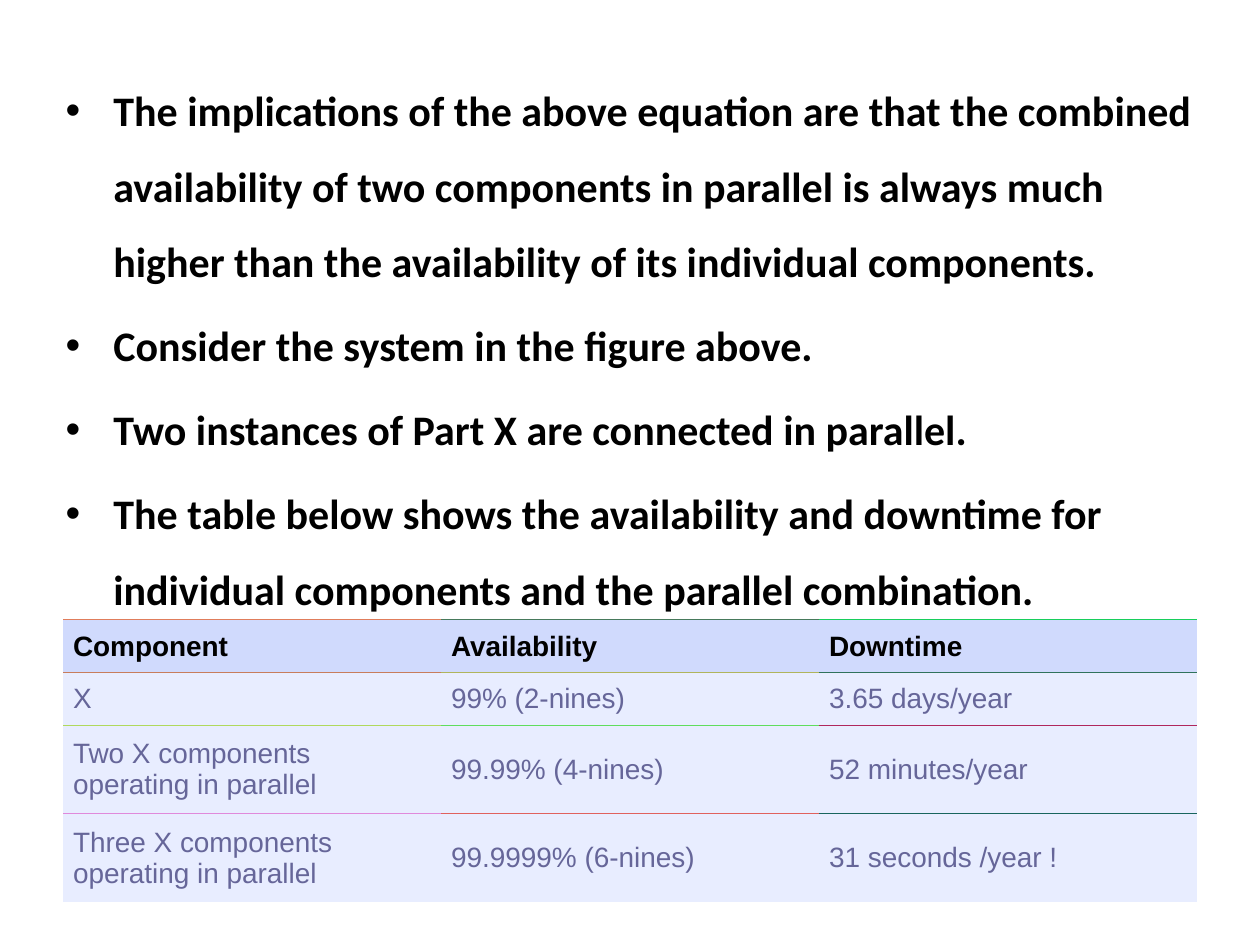
import lxml.etree
import pptx
import pptx.dml.color
import pptx.enum.text
import pptx.oxml.ns
import pptx.util

Inches, Pt = pptx.util.Inches, pptx.util.Pt
RGB = pptx.dml.color.RGBColor.from_string
qn = pptx.oxml.ns.qn

THEME = {
    "body": {"name": "Calibri", "size": Pt(24), "bold": True},
    "header": {"name": "Arial", "size": Pt(16), "bold": True},
    "entry": {"name": "Arial", "size": Pt(16), "bold": False},
    "black": "000000",
    "entry_text": "666699",
    "header_fill": "D0DAFD",
    "entry_fill": "E8EDFF",
    "rules": [
        ["E07D5C", "487A5C", "18CE5C"],
        ["C87D5C", "B0B55C", "30725C"],
        ["B0D95C", "60DD5C", "B0275C"],
        ["E089DB", "E0615D", "18655D"],
        ["FFFFFF", "FFFFFF", "FFFFFF"],
    ],
}

IMPLICATIONS = [
    "The implications of the above equation are that the combined availability of two "
    "components in parallel is always much higher than the availability of its individual components.",
    "Consider the system in the figure above.",
    "Two instances of Part X are connected in parallel.",
    "The table below shows the availability and downtime for individual components "
    "and the parallel combination.",
]

DOWNTIMES = [
    ["Component", "Availability", "Downtime"],
    ["X", "99% (2-nines)", "3.65 days/year"],
    ["Two X components operating in parallel", "99.99% (4-nines)", "52 minutes/year"],
    ["Three X components operating in parallel", "99.9999% (6-nines)", "31 seconds /year !"],
]
ROW_HEIGHTS = [0.42, 0.42, 0.7, 0.7]


def apply(target, values):
    for attribute, value in values.items():
        setattr(target, attribute, value)


def add_border(cell, side, color=None):
    line = lxml.etree.SubElement(cell._tc.get_or_add_tcPr(), qn(f"a:ln{side}"), w=str(Pt(0.75)))
    if color is None:
        lxml.etree.SubElement(line, qn("a:noFill"))
    else:
        fill = lxml.etree.SubElement(line, qn("a:solidFill"))
        lxml.etree.SubElement(fill, qn("a:srgbClr"), val=color)


deck = pptx.Presentation()
apply(deck, {"slide_width": Inches(10), "slide_height": Inches(7.5)})
slide = deck.slides.add_slide(deck.slide_layouts[1])
empty_title = slide.shapes.title.element
empty_title.getparent().remove(empty_title)

implications = slide.placeholders[1]
apply(implications, {"left": Inches(0.42), "top": Inches(0.42),
                     "width": Inches(9.33), "height": Inches(4.95)})
apply(implications.text_frame, {"text": "\n".join(IMPLICATIONS), "word_wrap": True,
                                "auto_size": pptx.enum.text.MSO_AUTO_SIZE.NONE,
                                "vertical_anchor": pptx.enum.text.MSO_ANCHOR.TOP})
for index, paragraph in enumerate(implications.text_frame.paragraphs):
    properties = paragraph._p.get_or_add_pPr()
    apply(paragraph, {"line_spacing": 1.5, "space_before": Pt(4.8 if index else 0)})
    properties.set("marL", str(Inches(0.38)))
    properties.set("indent", str(-Inches(0.38)))
    lxml.etree.SubElement(properties, qn("a:buFont"), typeface="Arial")
    lxml.etree.SubElement(properties, qn("a:buChar"), char="•")
    for run in paragraph.runs:
        apply(run.font, THEME["body"])
        run.font.color.rgb = RGB(THEME["black"])

downtimes = slide.shapes.add_table(
    len(DOWNTIMES), len(DOWNTIMES[0]), Inches(0.5), Inches(4.92), Inches(9), Inches(sum(ROW_HEIGHTS))
).table
for column in downtimes.columns:
    column.width = Inches(3)
for row, height in zip(downtimes.rows, ROW_HEIGHTS):
    row.height = Inches(height)

margins = dict.fromkeys(["margin_left", "margin_right", "margin_top", "margin_bottom"], Inches(0.08))
for r, entries in enumerate(DOWNTIMES):
    role = "entry" if r else "header"
    for c, entry in enumerate(entries):
        cell = downtimes.cell(r, c)
        apply(cell, {"text": entry, "vertical_anchor": pptx.enum.text.MSO_ANCHOR.MIDDLE, **margins})
        add_border(cell, "L")
        add_border(cell, "R")
        add_border(cell, "T", THEME["rules"][r][c])
        add_border(cell, "B", THEME["rules"][r + 1][c])
        cell.fill.solid()
        cell.fill.fore_color.rgb = RGB(THEME[f"{role}_fill"])
        font = cell.text_frame.paragraphs[0].runs[0].font
        apply(font, THEME[role])
        font.color.rgb = RGB(THEME["entry_text" if r else "black"])

deck.save("out.pptx")
